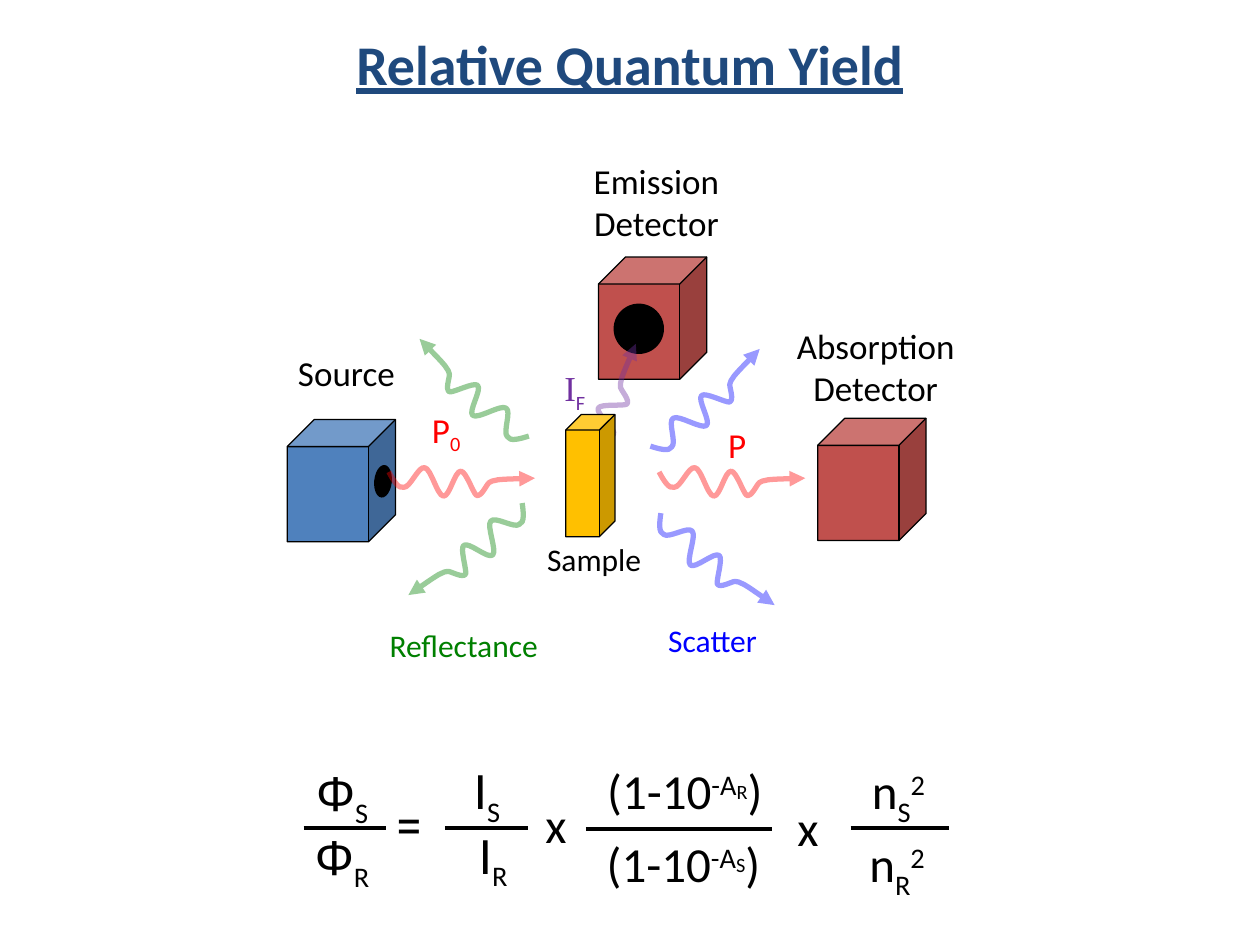
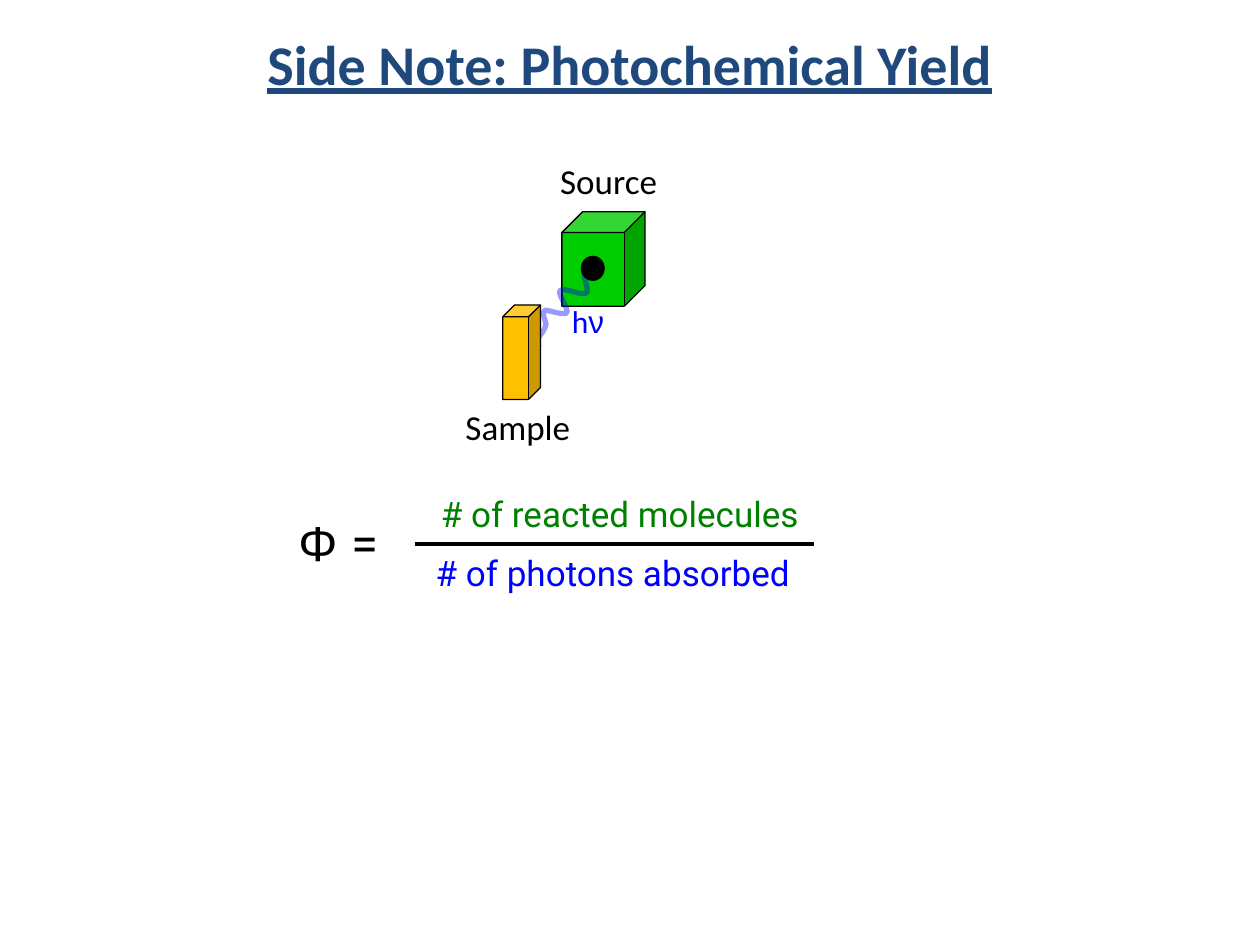
from dataclasses import dataclass
from typing import NamedTuple, Optional

from lxml.etree import SubElement
from pptx import Presentation
from pptx.dml.color import RGBColor
from pptx.enum.shapes import MSO_CONNECTOR, MSO_SHAPE
from pptx.enum.text import MSO_ANCHOR, MSO_AUTO_SIZE, PP_ALIGN
from pptx.oxml.ns import qn
from pptx.util import Emu, Inches, Pt

SLIDE_WIDTH, SLIDE_HEIGHT = Inches(10), Inches(7.5)
COLUMNS, ROWS = 100, 75


@dataclass(frozen=True)
class Theme:
    body: str = "Calibri"
    greek: str = "Arial"
    sans: str = "Roboto"
    serif: str = "Times New Roman"
    title_size: float = 32
    formula_size: float = 28
    label_size: float = 20
    small_size: float = 18
    bar_width: float = 2.25
    wave_width: float = 3
    wave_opacity: int = 40
    title: str = "1F497D"
    black: str = "000000"
    red: str = "FF0000"
    blue: str = "0000FF"
    green: str = "008000"
    purple: str = "7030A0"
    detector: str = "C0504D"
    lamp: str = "4F81BD"
    green_lamp: str = "00CC00"
    sample: str = "FFC000"


THEME = Theme()
SUBSCRIPT, SUPERSCRIPT = -25, 30
SAMPLE_DEPTH = 0.316

# Bezier points of a wave, tip first, in hundredths of an inch from its centre
WAVE = (
    (58, -10),
    (58, -10), (34, -7), (29, -6),
    (23, -4), (25, -5), (22, -3),
    (20, -1), (17, 9), (13, 8),
    (10, 6), (3, -10), (-1, -10),
    (-6, -10), (-8, 11), (-13, 11),
    (-18, 11), (-25, -10), (-30, -10),
    (-35, -11), (-40, 7), (-45, 7),
    (-49, 9), (-54, 2), (-58, -4),
)


def across(columns: float) -> Emu:
    return Emu(round(SLIDE_WIDTH * columns / COLUMNS))


def down(rows: float) -> Emu:
    return Emu(round(SLIDE_HEIGHT * rows / ROWS))


class Area(NamedTuple):
    """Left, top, width and height in grid columns and rows."""
    left: float
    top: float
    width: float
    height: float

    def lengths(self) -> tuple:
        return across(self.left), down(self.top), across(self.width), down(self.height)


class Span(NamedTuple):
    text: str
    font: str = THEME.body
    base: int = 0
    size: Optional[float] = None


def style_font(font, name: str, size: float, colour: str) -> None:
    font.name, font.size = name, Pt(size)
    font.color.rgb = RGBColor.from_string(colour)


@dataclass
class Label:
    area: Area
    lines: list
    size: float = THEME.label_size
    colour: str = THEME.black
    centred: bool = True
    wrap: bool = True

    def draw(self, slide) -> None:
        frame = slide.shapes.add_textbox(*self.area.lengths()).text_frame
        frame.word_wrap = self.wrap
        frame.auto_size = MSO_AUTO_SIZE.SHAPE_TO_FIT_TEXT
        for index, line in enumerate(self.lines):
            para = frame.add_paragraph() if index else frame.paragraphs[0]
            para.alignment = PP_ALIGN.CENTER if self.centred else PP_ALIGN.LEFT
            for span in [Span(line)] if isinstance(line, str) else line:
                run = para.add_run()
                run.text = span.text
                style_font(run.font, span.font, span.size or self.size, self.colour)
                if span.base:
                    run._r.get_or_add_rPr().set("baseline", str(span.base * 1000))


def formula(left: float, top: float, width: float, *spans: Span,
            centred: bool = False) -> Label:
    return Label(Area(left, top, width, 5.7), [list(spans)], THEME.formula_size,
                 centred=centred, wrap=False)


@dataclass
class Solid:
    area: Area
    colour: str
    kind: MSO_SHAPE = MSO_SHAPE.CUBE
    depth: float = 0.25
    rotation: float = 0

    def draw(self, slide) -> None:
        shape = slide.shapes.add_shape(self.kind, *self.area.lengths())
        shape.shadow.inherit = False
        shape.rotation = self.rotation
        shape.fill.solid()
        shape.fill.fore_color.rgb = RGBColor.from_string(self.colour)
        if self.kind == MSO_SHAPE.CUBE:
            shape.adjustments[0] = self.depth
            shape.line.color.rgb = RGBColor.from_string(THEME.black)
            shape.line.width = Pt(0)
        else:
            shape.line.fill.background()


def opening(left: float, top: float, width: float, height: float,
            rotation: float = 0) -> Solid:
    return Solid(Area(left, top, width, height), THEME.black, MSO_SHAPE.OVAL,
                 rotation=rotation)


@dataclass
class Bar:
    left: float
    right: float
    row: float

    def draw(self, slide) -> None:
        bar = slide.shapes.add_connector(
            MSO_CONNECTOR.STRAIGHT, across(self.left), down(self.row),
            across(self.right), down(self.row))
        bar.line.color.rgb = RGBColor.from_string(THEME.black)
        bar.line.width = Pt(THEME.bar_width)
        SubElement(bar._element.spPr, qn("a:effectLst"))


@dataclass
class Wave:
    column: float
    row: float
    rotation: float
    colour: str
    mirrored: bool = False
    scale: float = 1

    def draw(self, slide) -> None:
        unit = Inches(0.01) * self.scale
        side = -1 if self.mirrored else 1
        points = [(round(across(self.column) + side * x * unit),
                   round(down(self.row) + y * unit)) for x, y in WAVE]
        builder = slide.shapes.build_freeform(*points[0])
        builder.add_line_segments(points[1:], close=False)
        shape = builder.convert_to_shape()
        shape.shadow.inherit = False
        shape.rotation = self.rotation
        shape.fill.background()
        shape.line.color.rgb = RGBColor.from_string(self.colour)
        shape.line.width = Pt(THEME.wave_width)
        self.bend(shape)
        line = shape._element.spPr.find(qn("a:ln"))
        colour = next(line.iter(qn("a:srgbClr")))
        SubElement(colour, qn("a:alpha"), val=str(THEME.wave_opacity * 1000))
        SubElement(line, qn("a:headEnd"), type="triangle")

    @staticmethod
    def bend(shape) -> None:
        """Turn each three straight segments into one Bezier curve."""
        segments = list(shape._element.iter(qn("a:lnTo")))
        outline = segments[0].getparent()
        for start in range(0, len(segments), 3):
            curve = SubElement(outline, qn("a:cubicBezTo"))
            for segment in segments[start:start + 3]:
                curve.append(segment[0])
                outline.remove(segment)


@dataclass
class Page:
    title: str
    items: list

    def draw(self, deck) -> None:
        slide = deck.slides.add_slide(deck.slide_layouts[5])
        title = slide.shapes.title
        title.left, title.top, title.width, title.height = Area(5, 0, 90, 10).lengths()
        frame = title.text_frame
        frame.text = self.title
        frame.auto_size = MSO_AUTO_SIZE.NONE
        frame.vertical_anchor = MSO_ANCHOR.MIDDLE
        para = frame.paragraphs[0]
        para.alignment = PP_ALIGN.CENTER
        font = para.runs[0].font
        style_font(font, THEME.body, THEME.title_size, THEME.title)
        font.bold = font.underline = True
        for item in self.items:
            item.draw(slide)


def box(left: float, top: float, colour: str) -> Solid:
    return Solid(Area(left, top, 8.6, 9.7), colour)


def ratio(left: float, top: float, width: float, symbol: str, index: str) -> Label:
    return formula(left, top, width, Span(symbol, THEME.greek),
                   Span(index, base=SUBSCRIPT))


def absorbed(left: float, top: float, index: str) -> Label:
    return formula(left, top, 15.3, Span("(1-10"), Span("-A", base=SUPERSCRIPT),
                   Span(index, base=SUPERSCRIPT, size=THEME.label_size), Span(")"),
                   centred=True)


def refraction(left: float, top: float, index: str) -> Label:
    return formula(left, top, 6.8, Span("n"), Span(index, base=SUBSCRIPT),
                   Span("2", base=SUPERSCRIPT), centred=True)


RELATIVE_YIELD = Page("Relative Quantum Yield", [
    # Source and detectors
    box(47.5, 20.4, THEME.detector),
    opening(48.7, 24.1, 4, 4),
    box(22.8, 33.3, THEME.lamp),
    Label(Area(20.2, 27.4, 14.6, 5.7), ["Source"]),
    opening(29.7, 36.9, 1.4, 2.6, rotation=5.7),
    Label(Area(33.3, 31.9, 7.5, 4.4), [[Span("P"), Span("0", base=SUBSCRIPT)]],
          colour=THEME.red, centred=False),
    Label(Area(38.6, 42.4, 17.1, 5.2), ["Sample"], THEME.small_size),
    Label(Area(59.6, 25.3, 19.8, 7.7), ["Absorption", "Detector"]),
    box(64.9, 33.2, THEME.detector),
    # Light paths
    Wave(36.6, 38.4, 5.4, THEME.red),
    Wave(58.05, 38.4, 5.4, THEME.red),
    Wave(56.4, 32.1, 321.3, THEME.blue),
    Wave(56.5, 44.9, 41.9, THEME.blue),
    Wave(37.2, 31.3, 38.7, THEME.green, mirrored=True),
    Wave(37.4, 44.1, 318.1, THEME.green, mirrored=True),
    Label(Area(56.8, 33.1, 7.5, 4.4), ["P"], colour=THEME.red, centred=False),
    Label(Area(48, 48.8, 17.1, 5.2), ["Scatter"], THEME.small_size, THEME.blue),
    Label(Area(27.4, 49.2, 18.8, 5.2), ["Reflectance"], THEME.small_size, THEME.green),
    # Formula
    ratio(24.1, 60, 6.8, "Φ", "S"),
    ratio(24, 65.1, 7, "Φ", "R"),
    formula(30.4, 62.6, 4.9, Span("=", THEME.sans)),
    Bar(24.1, 30.6, 65.7),
    ratio(36.6, 59.9, 5.1, "Ι", "S"),
    ratio(37, 65, 5.4, "Ι", "R"),
    formula(42.3, 62.6, 3.7, Span("x")),
    Bar(35.3, 41.9, 65.7),
    absorbed(46.7, 59.9, "R"),
    formula(62.3, 62.8, 3.7, Span("x")),
    Bar(46.5, 61.3, 65.8),
    absorbed(46.6, 65.7, "S"),
    Bar(67.5, 75.3, 65.7),
    refraction(67.8, 65.7, "R"),
    refraction(67.9, 59.9, "S"),
    # Emission
    Label(Area(42.2, 12.2, 19.8, 7.7), ["Emission", "Detector"]),
    Wave(48.4, 32.8, 300.3, THEME.purple),
    Solid(Area(44.9, 32.9, 3.9, 9.7), THEME.sample, depth=SAMPLE_DEPTH),
    Label(Area(43.8, 28.6, 7.5, 4.4),
          [[Span("I", THEME.serif), Span("F", base=SUBSCRIPT)]],
          colour=THEME.purple, centred=False),
])

PHOTOCHEMICAL_YIELD = Page("Side Note: Photochemical Yield", [
    # Formula
    formula(22.7, 40.2, 8.5, Span("Φ ", THEME.greek), Span("=", THEME.sans)),
    Bar(32.9, 64.6, 43.2),
    Label(Area(34, 38.6, 30.5, 4.4), [[Span("# of reacted molecules", THEME.sans)]],
          colour=THEME.green, centred=False, wrap=False),
    Label(Area(33.6, 43.3, 30.4, 4.4), [[Span("# of photons absorbed", THEME.sans)]],
          colour=THEME.blue, centred=False, wrap=False),
    # Source lighting the sample
    Solid(Area(44.6, 16.8, 6.6, 7.5), THEME.green_lamp),
    Label(Area(42.7, 12.2, 11.2, 4.4), ["Source"]),
    Label(Area(44.4, 23.5, 5, 4), [[Span("h"), Span("ν", THEME.greek)]],
          THEME.small_size, THEME.blue, centred=False),
    Label(Area(34.5, 31.7, 13.2, 4.4), ["Sample"]),
    Wave(44.35, 24.35, 134.6, THEME.blue, scale=0.77),
    opening(46.1, 20.3, 1.9, 2),
    Solid(Area(39.9, 24.2, 3, 7.5), THEME.sample, depth=SAMPLE_DEPTH),
])


def main() -> None:
    deck = Presentation()
    deck.slide_width, deck.slide_height = SLIDE_WIDTH, SLIDE_HEIGHT
    for page in (RELATIVE_YIELD, PHOTOCHEMICAL_YIELD):
        page.draw(deck)
    deck.save("out.pptx")


if __name__ == "__main__":
    main()
